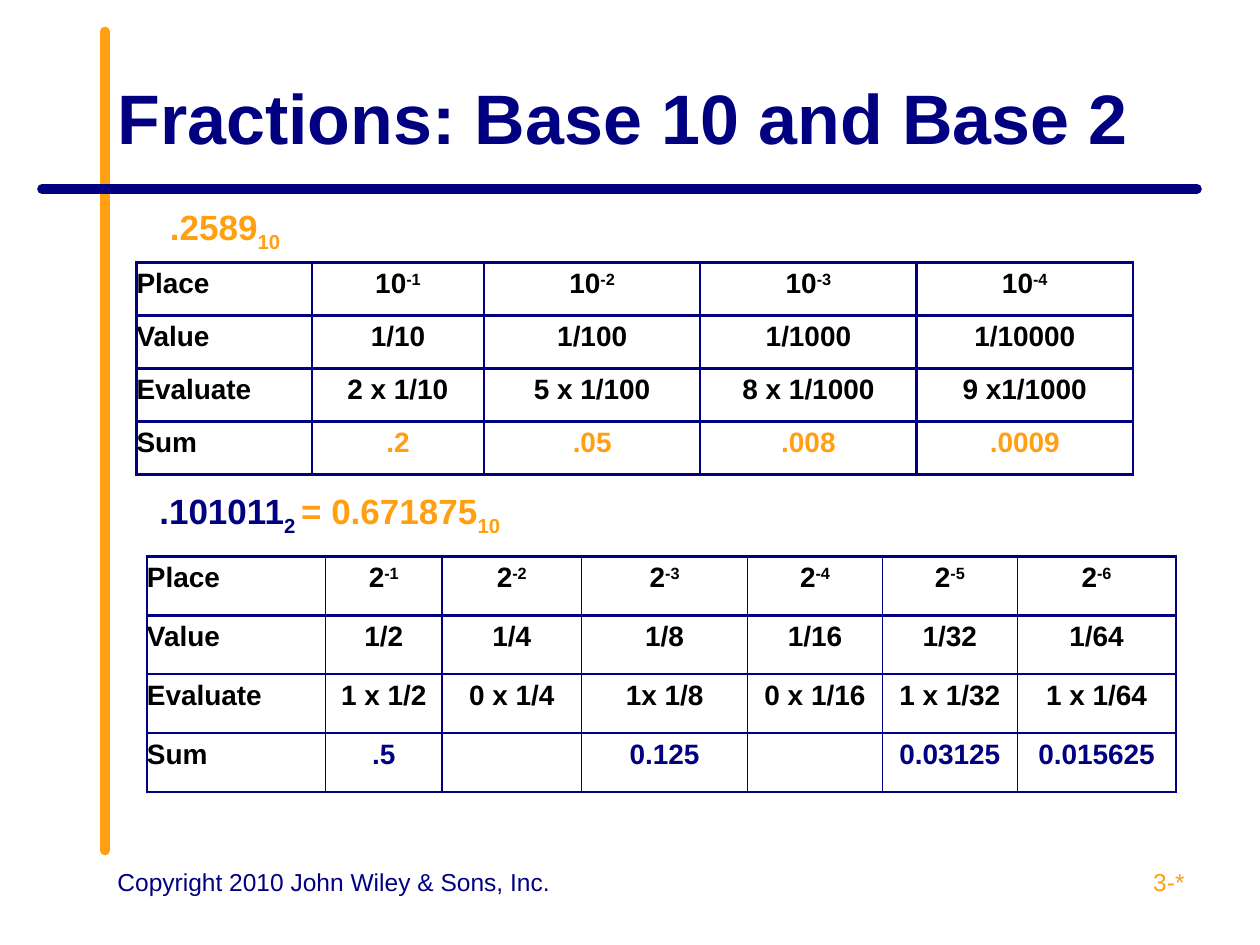
"""Build the slide on fractions in base 10 and base 2."""
from lxml import etree
from pptx import Presentation, util as u
from pptx.dml.color import RGBColor
from pptx.enum import shapes, text as t
from pptx.oxml import ns

NAVY = RGBColor(0x00, 0x00, 0x80)
ORANGE = RGBColor(0xFF, 0x9F, 0x11)
BLACK = RGBColor(0x00, 0x00, 0x00)
LEFT, CENTER, RIGHT = t.PP_ALIGN.LEFT, t.PP_ALIGN.CENTER, t.PP_ALIGN.RIGHT

presentation = Presentation()
presentation.slide_width, presentation.slide_height = u.Inches(10), u.Inches(7.5)
slide = presentation.slides.add_slide(presentation.slide_layouts[6])
UNIT = presentation.slide_width / 120


def grid(*counts):
    return [round(count * UNIT) for count in counts]


def add_run(paragraph, text, *, size, color, bold=True, shift=0):
    run = paragraph.add_run()
    run.text = text
    run.font.name = "Arial"
    run.font.size = u.Pt(size)
    run.font.bold = bold
    run.font.color.rgb = color
    if shift:
        run.font._element.set("baseline", str(shift * 1000))


rules = [((10, 81, 10, 3), ORANGE), ((114, 18, 4, 18), NAVY)]
for ends, color in rules:
    rule = slide.shapes.add_connector(shapes.MSO_CONNECTOR.STRAIGHT, *grid(*ends))
    rule.line.color.rgb = color
    rule.line.width = u.Pt(5.5)
    rule.line._ln.set("cap", "rnd")
    etree.SubElement(rule._element.spPr, ns.qn("a:effectLst"))

text_boxes = [
    ((10, 3.6, 104, 15), LEFT, 40, True, [("Fractions: Base 10 and Base 2", NAVY, 0)]),
    ((15, 19, 32, 5.2), LEFT, 20, True, [(".2589", ORANGE, 0), ("10", ORANGE, -25)]),
    ((14, 46, 36, 5.2), LEFT, 20, True,
     [(".101011", NAVY, 0), ("2 ", NAVY, -25), ("= 0.671875", ORANGE, 0), ("10", ORANGE, -25)]),
    ((86, 82, 28, 6.2), RIGHT, 14, False, [("3-*", ORANGE, 0)]),
    ((10, 82, 44, 6.2), LEFT, 14, False, [("Copyright 2010 John Wiley & Sons, Inc.", NAVY, 0)]),
]
for place, align, size, bold, runs in text_boxes:
    frame = slide.shapes.add_textbox(*grid(*place)).text_frame
    frame.word_wrap = True
    frame.vertical_anchor = t.MSO_ANCHOR.MIDDLE if size == 40 else t.MSO_ANCHOR.TOP
    paragraph = frame.paragraphs[0]
    paragraph.alignment = align
    for text, color, shift in runs:
        add_run(paragraph, text, size=size, color=color, bold=bold, shift=shift)

decimal_rows = [
    ["Place", "10^-1", "10^-2", "10^-3", "10^-4"],
    ["Value", "1/10", "1/100", "1/1000", "1/10000"],
    ["Evaluate", "2 x 1/10", "5 x 1/100", "8 x 1/1000", "9 x1/1000"],
    ["Sum", ".2", ".05", ".008", ".0009"],
]
binary_rows = [
    ["Place", "2^-1", "2^-2", "2^-3", "2^-4", "2^-5", "2^-6"],
    ["Value", "1/2", "1/4", "1/8", "1/16", "1/32", "1/64"],
    ["Evaluate", "1 x 1/2", "0 x 1/4", "1x 1/8", "0 x 1/16", "1 x 1/32", "1 x 1/64"],
    ["Sum", ".5", "", "0.125", "", "0.03125", "0.015625"],
]
tables = [
    (13, 25, 5.05, [16.7, 16.4, 20.6, 20.6, 20.6], decimal_rows, ORANGE, 1.5),
    (14, 53, 5.61, [17, 11.1, 13.3, 15.8, 12.85, 12.85, 15.1], binary_rows, NAVY, 1),
]
for left, top, row_height, widths, rows, sum_color, inner_width in tables:
    place = grid(left, top, sum(widths), row_height * len(rows))
    table = slide.shapes.add_table(len(rows), len(widths), *place).table
    table.first_row = table.horz_banding = False
    for column, width in zip(table.columns, grid(*widths)):
        column.width = width
    for row_index, row in enumerate(rows):
        table.rows[row_index].height = grid(row_height)[0]
        for column_index, text in enumerate(row):
            cell = table.cell(row_index, column_index)
            cell.margin_left = cell.margin_right = cell.margin_top = cell.margin_bottom = 0
            cell.fill.background()
            first, last = column_index == 0, column_index == len(row) - 1
            sides = {"L": 1.5 if first else inner_width, "R": 1.5 if last else inner_width,
                     "T": 1.5, "B": 1.5}
            for position, (side, width) in enumerate(sides.items()):
                border = etree.Element(ns.qn(f"a:ln{side}"), w=str(u.Pt(width)))
                fill = etree.SubElement(border, ns.qn("a:solidFill"))
                etree.SubElement(fill, ns.qn("a:srgbClr"), val=str(NAVY))
                cell._tc.get_or_add_tcPr().insert(position, border)
            paragraph = cell.text_frame.paragraphs[0]
            paragraph.alignment = LEFT if first else CENTER
            paragraph.line_spacing = 1.2
            color = sum_color if row[0] == "Sum" and not first else BLACK
            for part, shift in zip(text.split("^"), (0, 30)):
                if part:
                    add_run(paragraph, part, size=16, color=color, shift=shift)

presentation.save("out.pptx")
